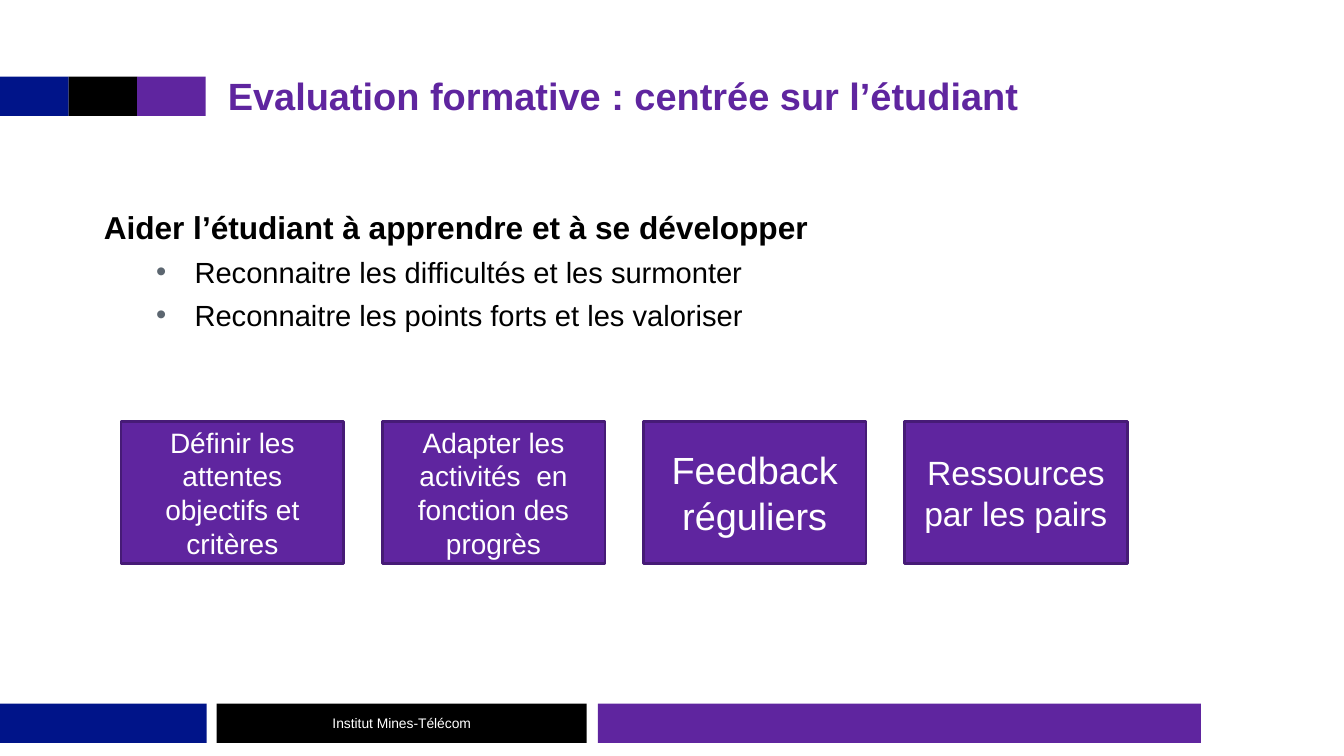
from lxml.etree import SubElement
from pptx import Presentation
from pptx.dml.color import RGBColor
from pptx.enum.shapes import MSO_SHAPE
from pptx.enum.text import MSO_ANCHOR, MSO_AUTO_SIZE, PP_ALIGN
from pptx.oxml.ns import qn
from pptx.util import Inches, Pt

COLOURS = {
    "blue": "001489", "black": "000000", "purple": "5F259F",
    "edge": "461B76", "grey": "5C6670", "white": "FFFFFF",
}


def colour(name):
    return RGBColor.from_string(COLOURS[name])


class SlideBuilder:
    """Holds the house style and the slide being filled."""

    font_name = "Arial"
    wide_margins = (0.11, 0.06)
    box_margins = (0.1, 0.05)

    def __init__(self, slide):
        self.slide = slide

    def style_frame(self, frame, margins, anchor):
        side, end = (Inches(value) for value in margins)
        settings = {
            "margin_left": side, "margin_right": side,
            "margin_top": end, "margin_bottom": end,
            "word_wrap": True, "auto_size": MSO_AUTO_SIZE.NONE,
            "vertical_anchor": anchor,
        }
        for name, value in settings.items():
            setattr(frame, name, value)

    def set_text(self, paragraph, text, size, tint, bold=False, align=PP_ALIGN.LEFT):
        paragraph.text = text
        paragraph.alignment = align
        settings = {"name": self.font_name, "size": Pt(size), "bold": bold}
        for name, value in settings.items():
            setattr(paragraph.font, name, value)
        paragraph.font.color.rgb = colour(tint)

    def title(self, text, place, size):
        heading = self.slide.shapes.title
        for name, value in zip(("left", "top", "width", "height"), place):
            setattr(heading, name, Inches(value))
        self.style_frame(heading.text_frame, self.wide_margins, MSO_ANCHOR.BOTTOM)
        self.set_text(heading.text_frame.paragraphs[0], text, size, "purple", bold=True)

    def block(self, place, fill, text="", size=20, edge=None):
        block = self.slide.shapes.add_shape(MSO_SHAPE.RECTANGLE, *map(Inches, place))
        block.shadow.inherit = False
        block.fill.solid()
        block.fill.fore_color.rgb = colour(fill)
        if edge:
            block.line.color.rgb = colour(edge)
            block.line.width = Pt(2)
        else:
            block.line.fill.background()
        if text:
            self.style_frame(block.text_frame, self.box_margins, MSO_ANCHOR.MIDDLE)
            self.set_text(block.text_frame.paragraphs[0], text, size, "white",
                          align=PP_ALIGN.CENTER)

    def bullet(self, paragraph):
        properties = paragraph._p.get_or_add_pPr()
        properties.set("marL", str(Inches(0.9)))
        properties.set("indent", str(Inches(-0.38)))
        tint = SubElement(properties, qn("a:buClr"))
        SubElement(tint, qn("a:srgbClr"), val=COLOURS["grey"])
        SubElement(properties, qn("a:buFont"), typeface=self.font_name)
        SubElement(properties, qn("a:buChar"), char="•")

    def bullet_list(self, place, lead, points):
        frame = self.slide.shapes.add_textbox(*map(Inches, place)).text_frame
        self.style_frame(frame, self.wide_margins, MSO_ANCHOR.TOP)
        self.set_text(frame.paragraphs[0], lead, 22.6, "black", bold=True)
        for point in points:
            paragraph = frame.add_paragraph()
            paragraph.level = 1
            self.bullet(paragraph)
            paragraph.space_before = Pt(6)
            self.set_text(paragraph, point, 20.8, "black")


def main():
    deck = Presentation()
    deck.slide_width, deck.slide_height = Inches(13.33), Inches(7.5)
    builder = SlideBuilder(deck.slides.add_slide(deck.slide_layouts[5]))

    # Footer bars
    footer = [
        (0, 2.05, "blue", ""),
        (5.93, 5.98, "purple", ""),
        (2.15, 3.67, "black", "Institut Mines-Télécom"),
    ]
    for left, width, fill, text in footer:
        builder.block((left, 6.98, width, 0.39), fill, text, size=9.9)

    # Colour band beside the title
    for index, fill in enumerate(("blue", "black", "purple")):
        builder.block((index * 0.68, 0.76, 0.68, 0.39), fill)

    # Title and goals
    builder.title("Evaluation formative : centrée sur l’étudiant",
                  (2.15, 0, 10.51, 1.23), 27.1)
    builder.bullet_list(
        (0.92, 2, 11.5, 2),
        "Aider l’étudiant à apprendre et à se développer",
        ["Reconnaitre les difficultés et les surmonter",
         "Reconnaitre les points forts et les valoriser"],
    )

    # Row of means
    means = [
        ("Définir les attentes objectifs et critères", 20),
        ("Adapter les activités  en fonction des progrès", 20),
        ("Feedback réguliers", 27),
        ("Ressources par les pairs", 24),
    ]
    for index, (text, size) in enumerate(means):
        builder.block((1.2 + index * 2.59, 4.18, 2.21, 1.41), "purple",
                      text, size, edge="edge")

    deck.save("out.pptx")


if __name__ == "__main__":
    main()
